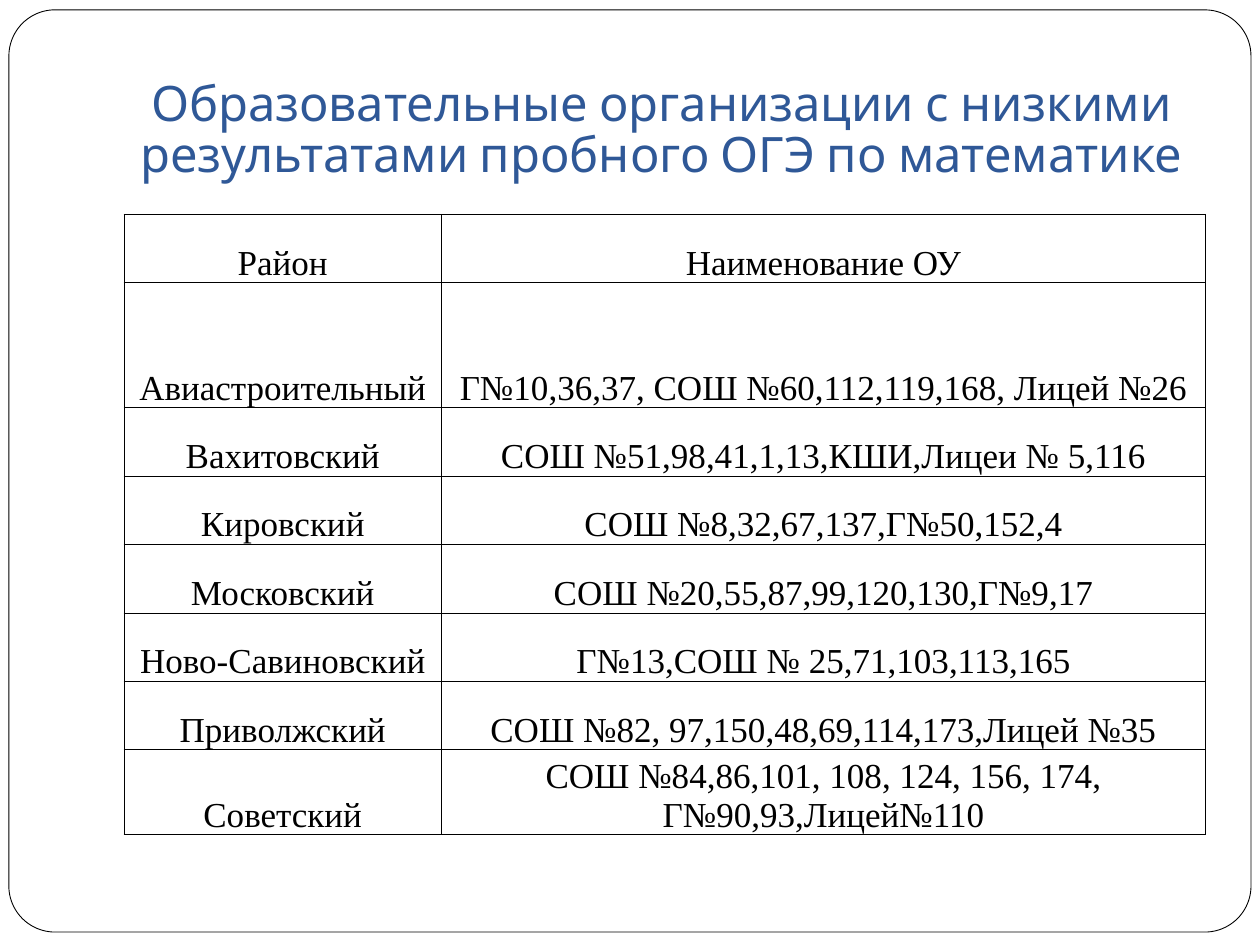
from lxml.etree import SubElement
from pptx import Presentation
from pptx.dml.color import RGBColor
from pptx.enum.shapes import MSO_SHAPE
from pptx.enum.text import MSO_ANCHOR, PP_ALIGN
from pptx.oxml.ns import qn
from pptx.util import Cm, Pt

BLACK = RGBColor(0x00, 0x00, 0x00)
WHITE = RGBColor(0xFF, 0xFF, 0xFF)
BLUE = RGBColor(0x2F, 0x58, 0x97)

TITLE = "Образовательные организации с низкими результатами пробного ОГЭ по математике"
SCHOOLS_BY_DISTRICT = [
    ("Район", "Наименование ОУ"),
    ("Авиастроительный", "Г№10,36,37, СОШ №60,112,119,168, Лицей №26"),
    ("Вахитовский", "СОШ №51,98,41,1,13,КШИ,Лицеи № 5,116"),
    ("Кировский", "СОШ №8,32,67,137,Г№50,152,4"),
    ("Московский", "СОШ №20,55,87,99,120,130,Г№9,17"),
    ("Ново-Савиновский", "Г№13,СОШ № 25,71,103,113,165"),
    ("Приволжский", "СОШ №82, 97,150,48,69,114,173,Лицей №35"),
    ("Советский", "СОШ №84,86,101, 108, 124, 156, 174, Г№90,93,Лицей№110"),
]
ROW_HEIGHT = 1.38
TALL_ROW_HEIGHT = 2.52


class SlideBuilder:
    """Holds the slide and its style, and adds each kind of element."""

    title_font = "Karla"
    table_font = "Times New Roman"
    line_width = Pt(0.5)

    def __init__(self, slide):
        self.slide = slide

    def style(self, paragraph, font_name, size, color):
        paragraph.alignment = PP_ALIGN.CENTER
        paragraph.font.name = font_name
        paragraph.font.size = Pt(size)
        paragraph.font.color.rgb = color

    def frame(self, left, top, width, height):
        border = self.slide.shapes.add_shape(
            MSO_SHAPE.ROUNDED_RECTANGLE, Cm(left), Cm(top), Cm(width), Cm(height)
        )
        border.adjustments[0] = 0.05
        border.shadow.inherit = False
        border.fill.solid()
        border.fill.fore_color.rgb = WHITE
        border.line.color.rgb = BLACK
        border.line.width = self.line_width

    def title(self, text, left, top, width, height):
        heading = self.slide.shapes.add_textbox(
            Cm(left), Cm(top), Cm(width), Cm(height)
        ).text_frame
        heading.word_wrap = True
        heading.vertical_anchor = MSO_ANCHOR.BOTTOM
        heading.margin_bottom = Cm(0.25)
        heading.text = text
        heading.paragraphs[0].line_spacing = 0.87
        self.style(heading.paragraphs[0], self.title_font, 27.9, BLUE)

    def table(self, rows, left, top, widths, heights):
        grid = self.slide.shapes.add_table(
            len(rows), len(widths), Cm(left), Cm(top), Cm(sum(widths)), Cm(sum(heights))
        ).table
        for column, width in zip(grid.columns, widths):
            column.width = Cm(width)
        for row, height, texts in zip(grid.rows, heights, rows):
            row.height = Cm(height)
            for cell, text in zip(row.cells, texts):
                self.cell(cell, text)

    def cell(self, cell, text):
        cell.text = text
        cell.vertical_anchor = MSO_ANCHOR.BOTTOM
        cell.margin_left = cell.margin_right = cell.margin_top = Cm(0.02)
        cell.margin_bottom = 0
        self.style(cell.text_frame.paragraphs[0], self.table_font, 20, BLACK)
        self.cell_borders(cell)
        cell.fill.solid()
        cell.fill.fore_color.rgb = WHITE

    def cell_borders(self, cell):
        properties = cell._tc.get_or_add_tcPr()
        for side in ("a:lnL", "a:lnR", "a:lnT", "a:lnB"):
            edge = SubElement(properties, qn(side), w=str(self.line_width))
            fill = SubElement(edge, qn("a:solidFill"))
            SubElement(fill, qn("a:srgbClr"), val=str(BLACK))


def main():
    presentation = Presentation()
    presentation.slide_width = Cm(25.4)
    presentation.slide_height = Cm(19.05)
    builder = SlideBuilder(presentation.slides.add_slide(presentation.slide_layouts[6]))
    builder.frame(0.18, 0.2, 25.04, 18.59)
    builder.title(TITLE, 2.54, 0.76, 21.59, 3.18)
    heights = [ROW_HEIGHT] * len(SCHOOLS_BY_DISTRICT)
    heights[1] = TALL_ROW_HEIGHT
    builder.table(SCHOOLS_BY_DISTRICT, 2.5, 4.32, [6.4, 15.4], heights)
    presentation.save("out.pptx")


if __name__ == "__main__":
    main()
